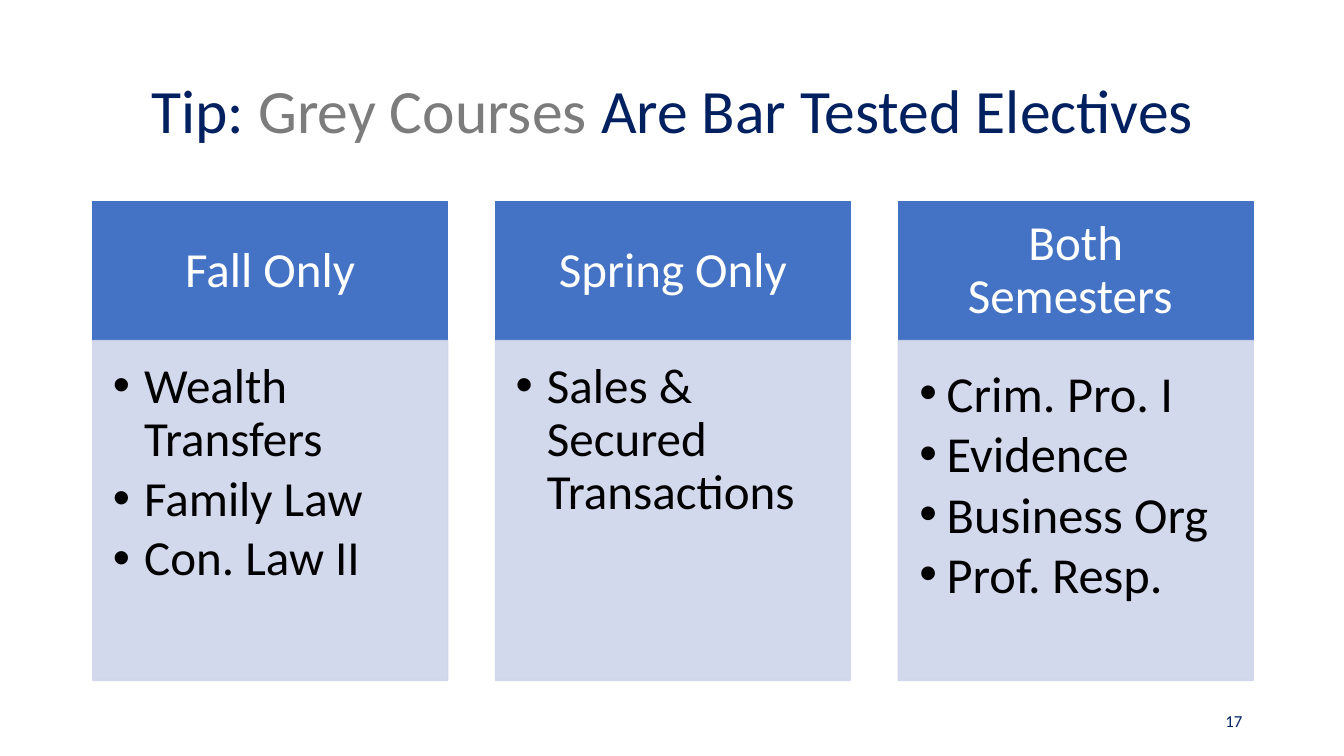
from dataclasses import dataclass

from lxml import etree
from pptx import Presentation
from pptx import util as u
from pptx.dml.color import RGBColor
from pptx.enum import shapes, text
from pptx.oxml.ns import qn


@dataclass(frozen=True)
class Theme:
    font: str = "Calibri"
    navy: str = "002060"
    grey: str = "7C7C7C"
    header: str = "4472C4"
    panel: str = "CFD5EA"
    white: str = "FFFFFF"
    black: str = "000000"
    title_size: int = 44
    column_size: int = 35
    wide_size: int = 36
    number_size: int = 12


theme = Theme()


def write(paragraph, words, size, color, **layout):
    run = paragraph.add_run()
    run.text = words
    for name, value in {"name": theme.font, "size": u.Pt(size)}.items():
        setattr(run.font, name, value)
    run.font.color.rgb = RGBColor.from_string(color)
    for name, value in layout.items():
        setattr(paragraph, name, value)


def add_block(left, top, width, height, color, anchor, insets):
    block = slide.shapes.add_shape(
        shapes.MSO_SHAPE.RECTANGLE,
        u.Inches(left), u.Inches(top), u.Inches(width), u.Inches(height))
    block.shadow.inherit = False
    block.fill.solid()
    block.fill.fore_color.rgb = RGBColor.from_string(color)
    block.line.color.rgb = RGBColor.from_string(color)
    block.line.width = u.Pt(1)
    frame = block.text_frame
    frame.word_wrap = True
    frame.vertical_anchor = anchor
    for side, inset in zip(("left", "top", "right", "bottom"), insets):
        setattr(frame, f"margin_{side}", u.Inches(inset))
    return block


deck = Presentation()
deck.slide_width, deck.slide_height = u.Inches(13.33), u.Inches(7.5)
slide = deck.slides.add_slide(deck.slide_layouts[5])

title = slide.shapes.title
title_place = {"left": 0.92, "top": 0.4, "width": 11.5, "height": 1.45}
for name, value in title_place.items():
    setattr(title, name, u.Inches(value))
title.text_frame.vertical_anchor = text.MSO_ANCHOR.MIDDLE
title.text_frame.auto_size = text.MSO_AUTO_SIZE.NONE
for words, color in (("Tip: ", theme.navy), ("Grey Courses ", theme.grey),
                     ("Are Bar Tested Electives", theme.navy)):
    write(title.text_frame.paragraphs[0], words, theme.title_size, color,
          alignment=text.PP_ALIGN.CENTER, line_spacing=0.9)

column_left, column_step, column_width = 0.92, 3.995, 3.52
header_top, header_height, panel_height = 2, 1.38, 3.37
header_insets = (0.27, 0.16, 0.27, 0.16)
narrow = {"size": theme.column_size, "indent": 0.31, "spacing": 0.9,
          "after": 5, "insets": (0.2, 0.2, 0.27, 0.31)}
wide = {"size": theme.wide_size, "indent": 0.27, "spacing": 1.0,
        "after": 0, "insets": (0.21, 0.21, 0.28, 0.32)}
semesters = [
    ("Fall Only", ["Wealth Transfers", "Family Law", "Con. Law II"], narrow),
    ("Spring Only", ["Sales & Secured Transactions"], narrow),
    ("Both Semesters ", ["Crim. Pro. I", "Evidence", "Business Org", "Prof. Resp."], wide),
]

for index, (semester, courses, style) in enumerate(semesters):
    left = column_left + index * column_step
    header = add_block(left, header_top, column_width, header_height,
                       theme.header, text.MSO_ANCHOR.MIDDLE, header_insets)
    write(header.text_frame.paragraphs[0], semester, theme.column_size, theme.white,
          alignment=text.PP_ALIGN.CENTER, line_spacing=0.9)

    panel = add_block(left, header_top + header_height, column_width, panel_height,
                      theme.panel, text.MSO_ANCHOR.TOP, style["insets"])
    for color in panel.fill._xPr.iter(qn("a:srgbClr")):
        etree.SubElement(color, qn("a:alpha"), val="90000")
    frame = panel.text_frame
    for row, course in enumerate(courses):
        item = frame.add_paragraph() if row else frame.paragraphs[0]
        write(item, course, style["size"], theme.black,
              alignment=text.PP_ALIGN.LEFT, line_spacing=style["spacing"],
              space_after=u.Pt(style["after"]))
        properties = item._p.get_or_add_pPr()
        indent = u.Inches(style["indent"])
        properties.set("marL", str(indent))
        properties.set("indent", str(-indent))
        etree.SubElement(properties, qn("a:buFont"), typeface="Arial")
        etree.SubElement(properties, qn("a:buChar"), char="•")

page_number = slide.shapes.add_textbox(
    u.Inches(9.42), u.Inches(6.95), u.Inches(3), u.Inches(0.4)).text_frame
page_number.word_wrap = True
page_number.vertical_anchor = text.MSO_ANCHOR.MIDDLE
write(page_number.paragraphs[0], "17", theme.number_size, theme.navy,
      alignment=text.PP_ALIGN.RIGHT)

deck.save("out.pptx")
